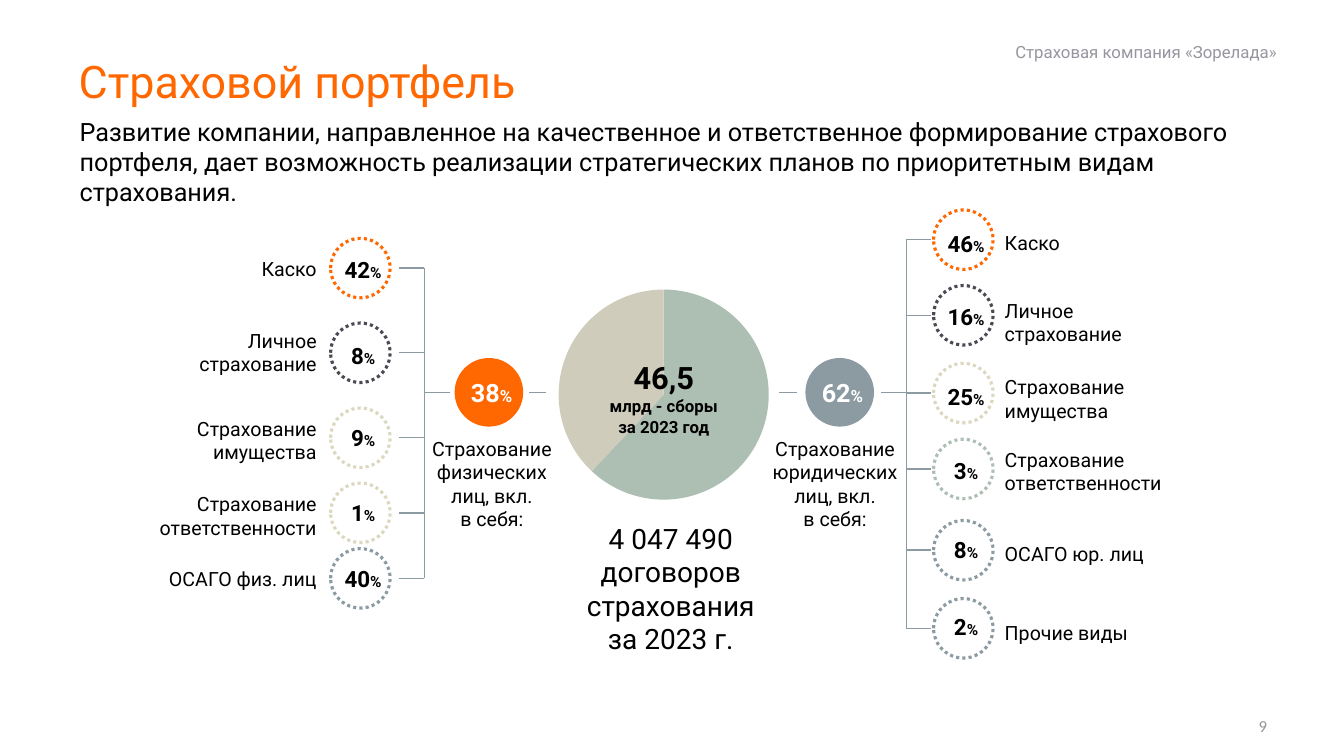
from lxml.etree import SubElement
from pptx import Presentation
from pptx.chart.data import CategoryChartData
from pptx.dml.color import RGBColor
from pptx.enum.chart import XL_CHART_TYPE
from pptx.enum.dml import MSO_LINE
from pptx.enum.shapes import MSO_CONNECTOR, MSO_SHAPE
from pptx.enum.text import MSO_ANCHOR, MSO_AUTO_SIZE, PP_ALIGN
from pptx.oxml import parse_xml
from pptx.oxml.ns import nsdecls, qn
from pptx.util import Pt

ORANGE, DARK, SAND = "FF6700", "4A4A54", "DCD8C0"
GREEN, GREY, BEIGE = "ADBFB3", "8C9BA2", "D0CCBC"
BLACK, WHITE = "000000", "FFFFFF"

TITLE = "Страховой портфель"
COMPANY = "Страховая компания «Зорелада»"
INTRO = ("Развитие компании, направленное на качественное и ответственное "
         "формирование страхового портфеля, дает возможность реализации "
         "стратегических планов по приоритетным видам страхования.")
PAGE_NUMBER = "9"
PIE = [("1", 62, GREEN), ("2", 38, BEIGE)]

# Rows: label, percent, ring colour, then middle heights of ring, percent, label
PERSONAL = [
    ("Каско", 42, ORANGE, 191.5, 192.6, 192.2),
    ("Личное страхование", 8, DARK, 252, 253.8, 251.6),
    ("Страхование имущества", 9, SAND, 312.7, 312.8, 314.3),
    ("Страхование ответственности", 1, SAND, 366.3, 366.1, 368.3),
    ("ОСАГО физ. лиц", 40, GREY, 413.1, 413.6, 413.3),
]
CORPORATE = [
    ("Каско", 46, ORANGE, 171.2, 173.9, 173.5),
    ("Личное страхование", 16, DARK, 225.2, 226.4, 230),
    ("Страхование имущества", 25, SAND, 280.8, 283.3, 284.8),
    ("Страхование ответственности", 3, GREEN, 335, 335.9, 336.6),
    ("ОСАГО юр. лиц", 8, GREY, 393, 392.8, 395.3),
    ("Прочие виды", 2, GREY, 448.8, 447.5, 452.2),
]
HUB_Y = 280.2
BRANCHES = [
    dict(rows=PERSONAL, share=38, colour=ORANGE, hub_x=349.2, caption_x=351.4,
         caption="Страхование\nфизических\nлиц, вкл.\nв себя:",
         ring_x=257.4, spine_x=303.1, tick_x=285.1, label_left=101.3,
         align=PP_ALIGN.RIGHT, links=[(303.1, 321.1), (378, 390.2)]),
    dict(rows=CORPORATE, share=62, colour=GREY, hub_x=599.8, caption_x=596.5,
         caption="Страхование\nюридических\nлиц, вкл.\nв себя:",
         ring_x=688.1, spine_x=647.3, tick_x=665.3, label_left=710.6,
         align=PP_ALIGN.LEFT, links=[(556.6, 569.5), (629.3, 660.2)]),
]
RING, HUB, LABEL_WIDTH, LABEL_HEIGHT = 42.5, 49, 132, 41
PERCENT_SHIFT = 2

presentation = Presentation()
presentation.slide_width, presentation.slide_height = Pt(960), Pt(540)
slide = presentation.slides.add_slide(presentation.slide_layouts[5])


def rgb(colour):
    return RGBColor.from_string(colour)


def format_text(shape, sizes, colour=BLACK, bold=False, align=PP_ALIGN.LEFT,
                font="Roboto"):
    """Format every paragraph; sizes go to its runs in order."""
    for paragraph in shape.text_frame.paragraphs:
        paragraph.alignment = align
        for run, size in zip(paragraph.runs, sizes):
            run.font.name, run.font.size = font, Pt(size)
            run.font.bold, run.font.color.rgb = bold, rgb(colour)


def add_text(text, left, top, width, height, size, anchor=MSO_ANCHOR.TOP,
             margins=(7.2, 3.6), **style):
    shape = slide.shapes.add_textbox(Pt(left), Pt(top), Pt(width), Pt(height))
    frame = shape.text_frame
    frame.word_wrap, frame.vertical_anchor = True, anchor
    frame.margin_left = frame.margin_right = Pt(margins[0])
    frame.margin_top = frame.margin_bottom = Pt(margins[1])
    frame.text = text
    format_text(shape, [size], **style)
    return shape


def add_percent(value, x, y, size, sign_size, colour):
    """Centre a bold number with a smaller percent sign on a point."""
    shape = add_text(str(value), x - 29, y - 14, 58, 28, size,
                     anchor=MSO_ANCHOR.MIDDLE)
    shape.text_frame.paragraphs[0].add_run().text = "%"
    format_text(shape, [size, sign_size], colour, True, PP_ALIGN.CENTER)


def add_circle(x, y, diameter, fill=None, outline=None):
    circle = slide.shapes.add_shape(
        MSO_SHAPE.OVAL, Pt(x - diameter / 2), Pt(y - diameter / 2),
        Pt(diameter), Pt(diameter))
    circle.shadow.inherit = False
    if fill:
        circle.fill.solid()
        circle.fill.fore_color.rgb = rgb(fill)
        circle.line.fill.background()
    else:
        circle.fill.background()
        circle.line.color.rgb = rgb(outline)
        circle.line.width = Pt(2.25)
        circle.line.dash_style = MSO_LINE.ROUND_DOT


def add_line(x1, y1, x2, y2):
    line = slide.shapes.add_connector(
        MSO_CONNECTOR.STRAIGHT, Pt(x1), Pt(y1), Pt(x2), Pt(y2))
    line.line.color.rgb, line.line.width = rgb(GREY), Pt(1)
    SubElement(line.element.spPr, qn("a:effectLst"))


def add_pie():
    data = CategoryChartData()
    data.categories = [name for name, value, colour in PIE]
    data.add_series("Series 1", [value for name, value, colour in PIE])
    chart = slide.shapes.add_chart(XL_CHART_TYPE.PIE, Pt(346.3), Pt(196.6),
                                   Pt(255.6), Pt(170.6), data).chart
    chart.has_legend = chart.has_title = False
    chart.font.name, chart.font.size = "Calibri", Pt(18)
    chart.font.color.rgb = rgb(DARK)
    plot = chart.plots[0]
    plot.vary_by_categories = False
    for index, (name, value, colour) in enumerate(PIE):
        fill = plot.series[0].points[index].format.fill
        fill.solid()
        fill.fore_color.rgb = rgb(colour)
    plot_area = chart.element.chart.plotArea
    for layout in plot_area.findall(qn("c:layout")):
        plot_area.remove(layout)
    plot_area.insert(0, parse_xml(
        f'<c:layout {nsdecls("c")}><c:manualLayout><c:layoutTarget val="inner"/>'
        '<c:xMode val="edge"/><c:yMode val="edge"/><c:x val="0.2"/>'
        '<c:y val="0.06"/><c:w val="0.6"/><c:h val="0.88"/>'
        '</c:manualLayout></c:layout>'))


def add_branch(branch):
    rows, spine_x, ring_x = branch["rows"], branch["spine_x"], branch["ring_x"]
    add_line(spine_x, rows[0][3], spine_x, rows[-1][3])
    for start, end in branch["links"]:
        add_line(start, HUB_Y, end, HUB_Y)
    add_circle(branch["hub_x"], HUB_Y, HUB, fill=branch["colour"])
    add_percent(branch["share"], branch["hub_x"] + PERCENT_SHIFT, HUB_Y, 18, 12, WHITE)
    add_text(branch["caption"], branch["caption_x"] - 60, 308.2, 120, 75, 14,
             align=PP_ALIGN.CENTER)
    for label, percent, colour, ring_y, percent_y, label_y in rows:
        add_line(spine_x, ring_y, branch["tick_x"], ring_y)
        add_circle(ring_x, ring_y, RING, outline=colour)
        add_percent(percent, ring_x + PERCENT_SHIFT, percent_y, 16, 11, BLACK)
        add_text(label, branch["label_left"], label_y - LABEL_HEIGHT / 2,
                 LABEL_WIDTH, LABEL_HEIGHT, 14, anchor=MSO_ANCHOR.MIDDLE,
                 align=branch["align"])


title = slide.shapes.title
title.left, title.top, title.width, title.height = Pt(49), Pt(31.7), Pt(623.5), Pt(51.8)
title.text_frame.text = TITLE
title.text_frame.auto_size = MSO_AUTO_SIZE.NONE
title.text_frame.vertical_anchor = MSO_ANCHOR.MIDDLE
format_text(title, [32], ORANGE)

add_text(INTRO, 56.9, 82.8, 862.6, 72.7, 18, margins=(0, 0))
add_text(COMPANY, 329, 26.6, 583.2, 14.4, 12, margins=(0, 3.6),
         colour="9696A0", align=PP_ALIGN.RIGHT)
add_pie()
add_text("46,5", 398.9, 252.7, 150.5, 33.8, 22, bold=True, align=PP_ALIGN.CENTER)
add_text("млрд - сборы\nза 2023 год", 398.9, 279.4, 150.5, 36, 12, bold=True,
         align=PP_ALIGN.CENTER)
add_text("4 047 490 договоров страхования\nза 2023 г.", 403.9, 368.6, 150.5,
         128.2, 20, align=PP_ALIGN.CENTER)
for branch in BRANCHES:
    add_branch(branch)
add_text(PAGE_NUMBER, 688.3, 507.6, 223.9, 21.6, 12, anchor=MSO_ANCHOR.MIDDLE,
         colour="969699", align=PP_ALIGN.RIGHT, font="Calibri")

presentation.save("out.pptx")
